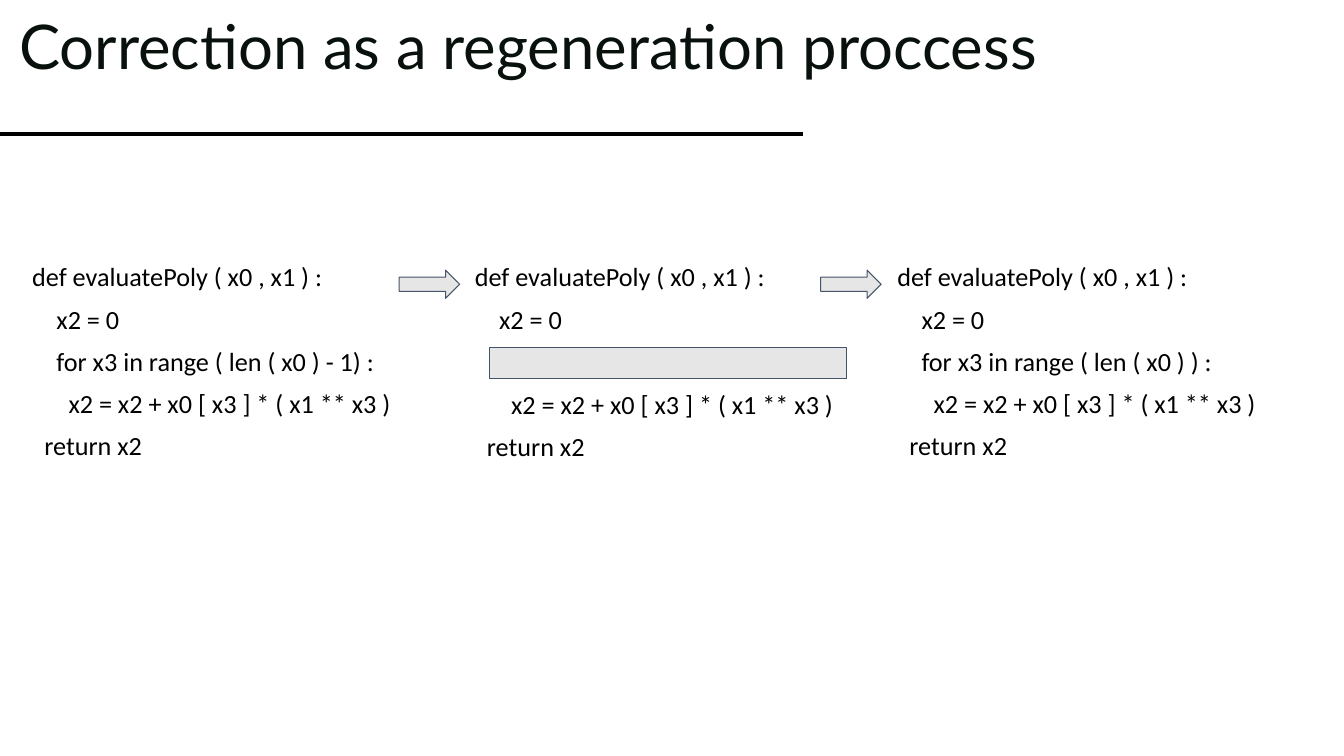
from pptx import Presentation
from pptx import util as u
from pptx.dml.color import RGBColor
from pptx.enum import shapes, text
from pptx.oxml import parse_xml
from pptx.oxml.ns import nsdecls

BLACK = RGBColor(0x00, 0x00, 0x00)
TITLE_INK = RGBColor(0x08, 0x11, 0x0B)
LIGHT_GREY = RGBColor(0xE7, 0xE6, 0xE6)
SLATE = RGBColor(0x44, 0x54, 0x6A)

CODE_SIZE = 18.7
LINE_GAP = 10
LINE_PITCH = 30.5
INDENT_STEP = 0.12

FUNCTION_HEAD = (0, "def evaluatePoly ( x0 , x1 ) :")
START_VALUE = (2, "x2 = 0")
LOOP_BODY = (3, "x2 = x2 + x0 [ x3 ] * ( x1 ** x3 )")
RETURN_LINE = (1, "return x2")


class CodeSlide:
    def __init__(self, deck):
        self.page = deck.slides.add_slide(deck.slide_layouts[5])
        self.title_font, self.code_font = "Lato", "Calibri"

    def set_frame(self, frame):
        frame.word_wrap = True
        frame.auto_size = text.MSO_AUTO_SIZE.NONE
        frame.vertical_anchor = text.MSO_ANCHOR.TOP
        frame.margin_left = frame.margin_right = u.Inches(0.13)
        frame.margin_top = frame.margin_bottom = u.Inches(0.13)

    def add_span(self, para, words, font, size, color):
        para.alignment = text.PP_ALIGN.LEFT
        para.line_spacing = 0.9
        span = para.add_run()
        span.text = words
        span.font.name = font
        span.font.size = u.Pt(size)
        span.font.color.rgb = color

    def title(self, words, left, top, width, height):
        box = self.page.shapes.title
        box.left, box.top = u.Inches(left), u.Inches(top)
        box.width, box.height = u.Inches(width), u.Inches(height)
        self.set_frame(box.text_frame)
        self.add_span(box.text_frame.paragraphs[0], words,
                      self.title_font, 44, TITLE_INK)

    def rule(self, top, right):
        line = self.page.shapes.add_connector(
            shapes.MSO_CONNECTOR.STRAIGHT,
            u.Inches(0), u.Inches(top), u.Inches(right), u.Inches(top))
        line.line.color.rgb = BLACK
        line.line.width = u.Pt(2.25)
        line._element.spPr.append(
            parse_xml(f"<a:effectLst {nsdecls('a')}/>"))

    def code(self, left, loop_line):
        """Write the function; without a loop line its place stays open."""
        box = self.page.shapes.add_textbox(
            u.Inches(left), u.Inches(2.49), u.Inches(4.36), u.Inches(3.12))
        frame = box.text_frame
        self.set_frame(frame)
        lines = [FUNCTION_HEAD, START_VALUE, loop_line, LOOP_BODY, RETURN_LINE]
        para, gap = frame.paragraphs[0], LINE_GAP
        for line in lines:
            if line is None:
                gap += LINE_PITCH
                continue
            level, words = line
            if para.runs:
                para = frame.add_paragraph()
            para.space_before = u.Pt(gap)
            margin = u.Inches(level * INDENT_STEP)
            para._p.get_or_add_pPr().set("marL", str(margin))
            self.add_span(para, words, self.code_font, CODE_SIZE, BLACK)
            gap = LINE_GAP

    def shape(self, kind, left, top, width, height):
        box = self.page.shapes.add_shape(
            kind, u.Inches(left), u.Inches(top),
            u.Inches(width), u.Inches(height))
        box.shadow.inherit = False
        box.fill.solid()
        box.fill.fore_color.rgb = LIGHT_GREY
        box.line.color.rgb = SLATE
        box.line.width = u.Pt(0.75)


def main():
    deck = Presentation()
    deck.slide_width, deck.slide_height = u.Inches(13.33), u.Inches(7.5)
    slide = CodeSlide(deck)
    slide.rule(1.33, 7.96)
    slide.title("Correction as a regeneration proccess", 0.06, 0.03, 11.31, 1.45)

    slide.code(0.19, (2, "for x3 in range ( len ( x0 ) - 1) :"))
    slide.code(4.58, None)
    slide.code(8.77, (2, "for x3 in range ( len ( x0 ) ) :"))

    slide.shape(shapes.MSO_SHAPE.RECTANGLE, 4.86, 3.45, 3.54, 0.31)
    for arrow_left in (3.96, 8.14):
        slide.shape(shapes.MSO_SHAPE.RIGHT_ARROW, arrow_left, 2.68, 0.6, 0.28)
    deck.save("out.pptx")


if __name__ == "__main__":
    main()
